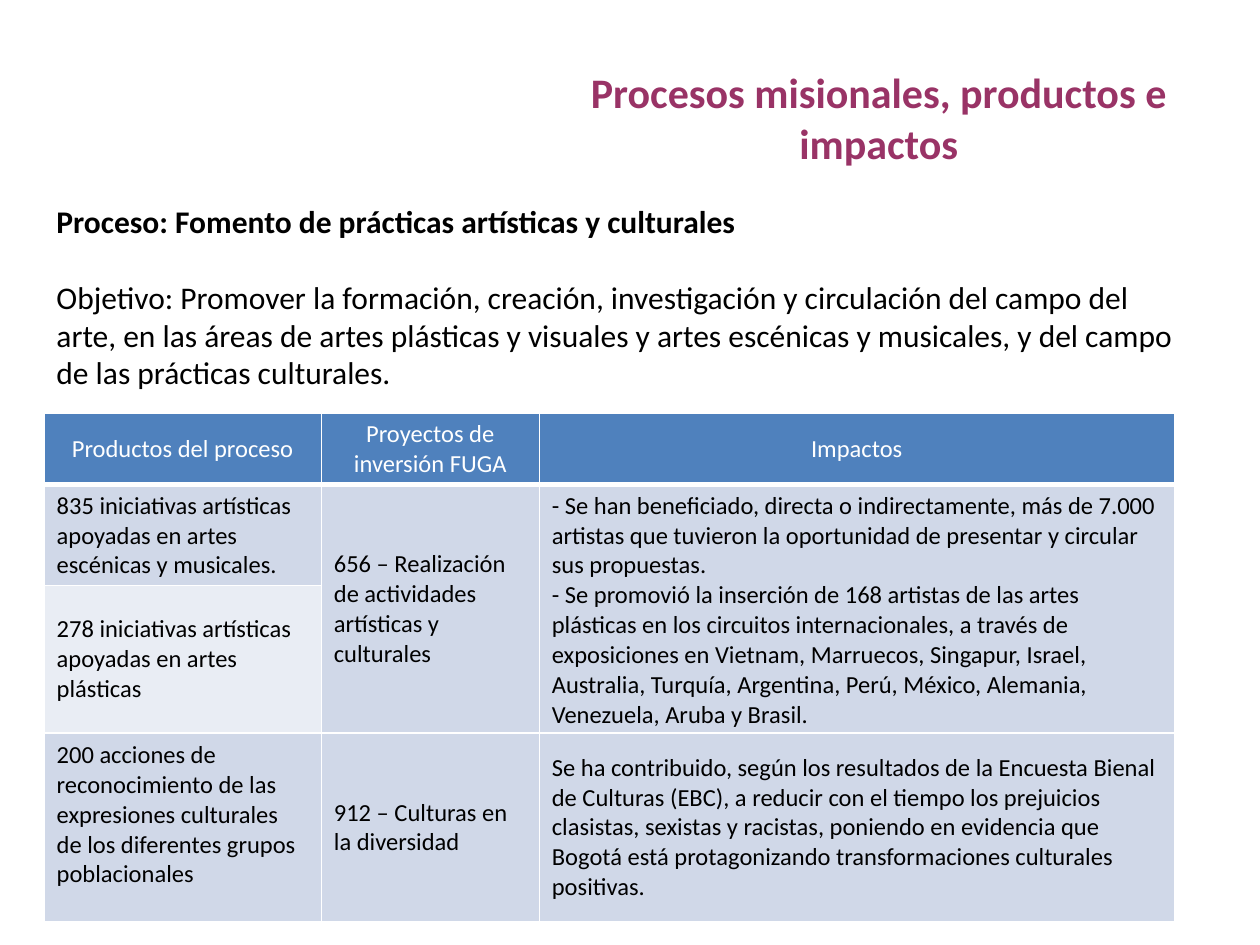
from lxml import etree
from pptx import Presentation
from pptx.dml.color import RGBColor
from pptx.enum.text import MSO_ANCHOR, MSO_AUTO_SIZE, PP_ALIGN
from pptx.oxml.ns import qn
from pptx.util import Inches, Pt

LEFT, CENTER = PP_ALIGN.LEFT, PP_ALIGN.CENTER
MIDDLE = MSO_ANCHOR.MIDDLE
FIT_SHAPE = MSO_AUTO_SIZE.SHAPE_TO_FIT_TEXT

BLACK = RGBColor(0x00, 0x00, 0x00)
WHITE = RGBColor(0xFF, 0xFF, 0xFF)
PLUM = RGBColor(0x99, 0x33, 0x66)
BLUE = RGBColor(0x4F, 0x81, 0xBD)
BAND_DARK = RGBColor(0xD0, 0xD8, 0xE8)
BAND_LIGHT = RGBColor(0xE9, 0xED, 0xF4)

HEADERS = ["Productos del proceso", "Proyectos de inversión FUGA", "Impactos"]
BODY = [
    ["835 iniciativas artísticas apoyadas en artes escénicas y musicales.",
     "656 – Realización de actividades artísticas y culturales",
     "- Se han beneficiado, directa o indirectamente, más de 7.000 artistas que "
     "tuvieron la oportunidad de presentar y circular sus propuestas.\n"
     "- Se promovió la inserción de 168 artistas de las artes plásticas en los "
     "circuitos internacionales, a través de exposiciones en Vietnam, Marruecos, "
     "Singapur, Israel, Australia, Turquía, Argentina, Perú, México, Alemania, "
     "Venezuela, Aruba y Brasil."],
    ["278 iniciativas artísticas apoyadas en artes plásticas", None, None],
    ["200 acciones de reconocimiento de las expresiones culturales de los "
     "diferentes grupos poblacionales",
     "912 – Culturas en la diversidad",
     "Se ha contribuido, según los resultados de la Encuesta Bienal de Culturas "
     "(EBC), a reducir con el tiempo los prejuicios clasistas, sexistas y racistas, "
     "poniendo en evidencia que Bogotá está protagonizando transformaciones "
     "culturales positivas."],
]


class SlideBuilder:
    font = "Calibri"
    cell_size = 14

    def __init__(self, slide):
        self.slide = slide

    def format(self, p, size, color, bold=False, align=LEFT):
        p.alignment = align
        for r in p.runs:
            r.font.name = self.font
            r.font.size = Pt(size)
            r.font.bold = bold
            r.font.color.rgb = color

    def text(self, box, text, size, color, align=LEFT, gap=0):
        """Add a text box whose first paragraph is bold."""
        sp = self.slide.shapes.add_textbox(*map(Inches, box))
        tf = sp.text_frame
        tf.word_wrap = True
        tf.auto_size = FIT_SHAPE
        tf.text = text
        for i, p in enumerate(tf.paragraphs):
            self.format(p, size, color, i == 0, align)
            if i:
                p.space_before = Pt(gap)

    def borders(self, cell, bottom):
        tc_pr = cell._tc.get_or_add_tcPr()
        widths = {"a:lnL": 1, "a:lnR": 1, "a:lnT": 1, "a:lnB": bottom}
        for i, (tag, width) in enumerate(widths.items()):
            ln = etree.Element(qn(tag), w=str(Pt(width)))
            fill = etree.SubElement(ln, qn("a:solidFill"))
            etree.SubElement(fill, qn("a:srgbClr"), val=str(WHITE))
            tc_pr.insert(i, ln)

    def cell(self, cell, text, fill, color=BLACK, align=LEFT, bottom=1):
        cell.fill.solid()
        cell.fill.fore_color.rgb = fill
        cell.vertical_anchor = MIDDLE
        self.borders(cell, bottom)
        if text:
            cell.text_frame.text = text
            for p in cell.text_frame.paragraphs:
                self.format(p, self.cell_size, color, align=align)

    def table(self, left, top, widths, heights, headers, body):
        frame = self.slide.shapes.add_table(
            len(heights), len(widths), Inches(left), Inches(top),
            Inches(sum(widths)), Inches(sum(heights)))
        table = frame.table
        for column, width in zip(table.columns, widths):
            column.width = Inches(width)
        for row, height in zip(table.rows, heights):
            row.height = Inches(height)
        for j, text in enumerate(headers):
            self.cell(table.cell(0, j), text, BLUE, WHITE, CENTER, bottom=3)
        for i, row in enumerate(body, 1):
            fill = BAND_DARK if i % 2 else BAND_LIGHT
            for j, text in enumerate(row):
                # An empty entry continues the cell above it
                self.cell(table.cell(i, j), text, BAND_DARK if text is None else fill)
                if text is None:
                    table.cell(i - 1, j).merge(table.cell(i, j))
        return table


def main():
    prs = Presentation()
    prs.slide_width, prs.slide_height = Inches(10), Inches(7.5)
    s = SlideBuilder(prs.slides.add_slide(prs.slide_layouts[6]))

    # Process and objective
    s.text((0.35, 1.55, 9.13, 1.62),
           "Proceso: Fomento de prácticas artísticas y culturales\n"
           "Objetivo: Promover la formación, creación, investigación y circulación "
           "del campo del arte, en las áreas de artes plásticas y visuales y artes "
           "escénicas y musicales, y del campo de las prácticas culturales.",
           18, BLACK, gap=22)

    # Products, projects and impacts
    table = s.table(0.35, 3.28, [2.2, 1.73, 5.04], [0.56, 0.8, 1.17, 1.5],
                    HEADERS, BODY)
    table.cell(3, 0).margin_bottom = Inches(0.25)

    # Title
    s.text((4.06, 0.48, 5.83, 0.91), "Procesos misionales, productos e impactos",
           24, PLUM, CENTER)

    prs.save("out.pptx")


if __name__ == "__main__":
    main()
